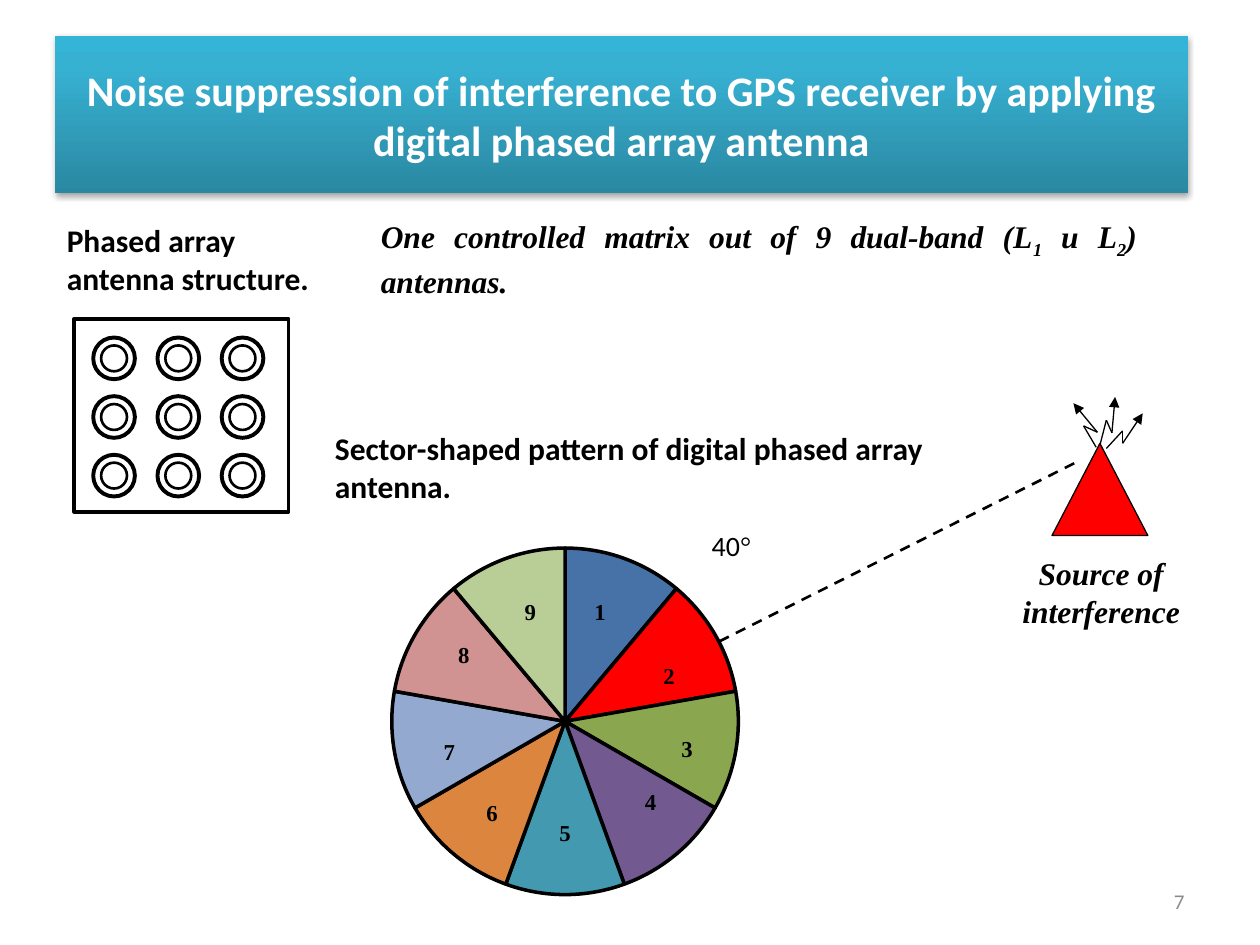
import copy
import itertools
from dataclasses import dataclass

import pptx
import pptx.chart.data
import pptx.dml.color
import pptx.enum.chart
import pptx.enum.dml
import pptx.enum.shapes
import pptx.enum.text
import pptx.oxml
import pptx.oxml.ns
import pptx.util

Pt = pptx.util.Pt
RGBColor = pptx.dml.color.RGBColor
Align = pptx.enum.text.PP_ALIGN
Anchor = pptx.enum.text.MSO_ANCHOR
Shape = pptx.enum.shapes.MSO_SHAPE

BLACK = RGBColor(0x00, 0x00, 0x00)
WHITE = RGBColor(0xFF, 0xFF, 0xFF)
RED = RGBColor(0xFF, 0x00, 0x00)
GREY = RGBColor(0x8C, 0x8C, 0x8C)
TITLE_STOPS = [
    (0, RGBColor(0x2A, 0x88, 0xA2)),
    (0.8, RGBColor(0x37, 0xB1, 0xD2)),
    (1, RGBColor(0x34, 0xB4, 0xD6)),
]
SANS = "Calibri"
SERIF = "Times New Roman"


@dataclass(frozen=True)
class Box:
    left: float
    top: float
    width: float
    height: float

    def lengths(self) -> list:
        return [Pt(v) for v in (self.left, self.top, self.width, self.height)]


@dataclass(frozen=True)
class Span:
    text: str
    baseline: int = 0
    font: str = ""


@dataclass(frozen=True)
class Style:
    font: str = SANS
    size: float = 18
    colour: RGBColor = BLACK
    bold: bool = True
    italic: bool = False
    align: Align = Align.LEFT
    anchor: Anchor = Anchor.TOP
    space_after: float = 0


@dataclass(frozen=True)
class Sector:
    colour: RGBColor
    label_shift_x: float
    label_shift_y: float


SECTORS = [
    Sector(RGBColor(0x46, 0x72, 0xA8), 3, -15),
    Sector(RED, 16.5, -0.5),
    Sector(RGBColor(0x8A, 0xA6, 0x4F), 21, 8),
    Sector(RGBColor(0x72, 0x59, 0x90), 17, 9),
    Sector(RGBColor(0x42, 0x99, 0xB0), 0, 15),
    Sector(RGBColor(0xDC, 0x85, 0x3E), -10, 15),
    Sector(RGBColor(0x93, 0xA9, 0xCF), -17.5, 9.5),
    Sector(RGBColor(0xD1, 0x93, 0x92), -15, -12.5),
    Sector(RGBColor(0xB9, 0xCD, 0x96), -3, -15),
]


def set_font(font, style: Style) -> None:
    font.name, font.size = style.font, Pt(style.size)
    font.bold, font.italic = style.bold, style.italic
    font.color.rgb = style.colour


def write(frame, spans: list[Span], style: Style):
    frame.word_wrap = True
    frame.vertical_anchor = style.anchor
    para = frame.paragraphs[0]
    para.alignment = style.align
    para.space_after = Pt(style.space_after)
    set_font(para.font, style)
    for part in spans:
        span = para.add_run()
        span.text = part.text
        if part.font:
            span.font.name = part.font
        if part.baseline:
            span.font._element.set("baseline", str(part.baseline))
    return para


def add_text(page, box: Box, text: str, style: Style) -> None:
    write(page.shapes.add_textbox(*box.lengths()).text_frame, [Span(text)], style)


def add_figure(page, kind: Shape, box: Box, fill: RGBColor, line: RGBColor, weight: float):
    figure = page.shapes.add_shape(kind, *box.lengths())
    figure.shadow.inherit = False
    figure.fill.solid()
    figure.fill.fore_color.rgb = fill
    figure.line.color.rgb = line
    figure.line.width = Pt(weight)
    return figure


def add_line(page, start: tuple, end: tuple, weight: float, arrow: bool = False):
    ends = [Pt(v) for v in (*start, *end)]
    line = page.shapes.add_connector(pptx.enum.shapes.MSO_CONNECTOR.STRAIGHT, *ends)
    line.line.color.rgb = BLACK
    line.line.width = Pt(weight)
    if arrow:
        head = pptx.oxml.parse_xml(f'<a:tailEnd {pptx.oxml.ns.nsdecls("a")} type="triangle"/>')
        line.line._get_or_add_ln().append(head)
    line._element.spPr.append(pptx.oxml.parse_xml(f'<a:effectLst {pptx.oxml.ns.nsdecls("a")}/>'))
    return line


def add_title(page, box: Box, text: str) -> None:
    title = page.shapes.add_shape(Shape.RECTANGLE, *box.lengths())
    title.line.fill.background()
    title.fill.gradient()
    title.fill.gradient_angle = 90
    first = title.fill.gradient_stops[0]._gs
    first.addnext(copy.deepcopy(first))
    for stop, (position, colour) in zip(title.fill.gradient_stops, TITLE_STOPS):
        stop.position = position
        stop.color.rgb = colour
    title._element.spPr.append(pptx.oxml.parse_xml(
        f'<a:effectLst {pptx.oxml.ns.nsdecls("a")}>'
        '<a:outerShdw blurRad="39370" dist="22860" dir="5400000" rotWithShape="0">'
        '<a:srgbClr val="000000"><a:alpha val="35000"/></a:srgbClr>'
        '</a:outerShdw></a:effectLst>'))
    style = Style(size=24, colour=WHITE, align=Align.CENTER, anchor=Anchor.MIDDLE)
    write(title.text_frame, [Span(text)], style)


def add_antenna_array(page) -> None:
    add_figure(page, Shape.RECTANGLE, Box(42.5, 182.2, 122.4, 110.2), WHITE, BLACK, 2.25)
    for row, column in itertools.product(range(3), repeat=2):
        centre_x, centre_y = 65.2 + 36.7 * column, 204.8 + 33.5 * row
        for size, weight in ((23.8, 2.25), (14.8, 1.5)):
            ring = Box(centre_x - size / 2, centre_y - size / 2, size, size)
            add_figure(page, Shape.OVAL, ring, WHITE, BLACK, weight)


def add_matrix_note(page) -> None:
    box = Box(212.6, 122.4, 442, 49.7)
    table = page.shapes.add_table(1, 1, *box.lengths()).table
    table.first_row = table.horz_banding = False
    cell = table.cell(0, 0)
    cell.fill.background()
    cell.margin_left = cell.margin_right = Pt(5)
    cell.margin_top = cell.margin_bottom = Pt(0)
    spans = [Span("One controlled matrix out of 9 dual-band (L"), Span("1", -25000),
             Span(" и L"), Span("2", -25000), Span(") antennas.")]
    para = write(cell.text_frame, spans, Style(SERIF, italic=True, align=Align.JUSTIFY))
    para.line_spacing = 1.15


def manual_layout(content: str):
    return pptx.oxml.parse_xml(f'<c:layout {pptx.oxml.ns.nsdecls("c")}><c:manualLayout>'
                               f'{content}</c:manualLayout></c:layout>')


def add_sector_pie(page, box: Box) -> None:
    numbers = [str(n + 1) for n in range(len(SECTORS))]
    sectors = pptx.chart.data.CategoryChartData()
    sectors.categories = numbers
    sectors.add_series("Series 1", [40] * len(SECTORS))
    pie = pptx.enum.chart.XL_CHART_TYPE.PIE
    chart = page.shapes.add_chart(pie, *box.lengths(), sectors).chart
    chart.has_legend = chart.has_title = False
    set_font(chart.font, Style(size=10, bold=False))
    plot = chart.plots[0]
    plot.vary_by_categories = True
    style = Style(SERIF, 13)
    centre = pptx.enum.chart.XL_LABEL_POSITION.CENTER
    labels = plot.series[0].data_labels
    labels.show_value, labels.position = True, centre
    set_font(labels.font, style)
    for index, (number, sector) in enumerate(zip(numbers, SECTORS)):
        point = plot.series[0].points[index]
        point.format.fill.solid()
        point.format.fill.fore_color.rgb = sector.colour
        point.format.line.color.rgb = BLACK
        point.format.line.width = Pt(2)
        span = point.data_label.text_frame.paragraphs[0].add_run()
        span.text = number
        set_font(span.font, style)
        point.data_label.position = centre
        point.data_label._get_or_add_dLbl().find(pptx.oxml.ns.qn("c:idx")).addnext(manual_layout(
            f'<c:x val="{sector.label_shift_x / box.width:.4f}"/>'
            f'<c:y val="{sector.label_shift_y / box.height:.4f}"/>'))
    for leader in labels._element.findall(pptx.oxml.ns.qn("c:showLeaderLines")):
        leader.set("val", "0")
    area = chart._chartSpace.chart.plotArea
    for old in area.findall(pptx.oxml.ns.qn("c:layout")):
        area.remove(old)
    area.insert(0, manual_layout(
        '<c:layoutTarget val="inner"/><c:xMode val="edge"/><c:yMode val="edge"/>'
        '<c:x val="0.127"/><c:y val="0.1"/><c:w val="0.744"/><c:h val="0.786"/>'))


def add_interference_source(page) -> None:
    beam = add_line(page, (411.1, 366.5), (614.9, 264.2), 1.5)
    beam.line.dash_style = pptx.enum.dml.MSO_LINE.DASH
    add_figure(page, Shape.ISOSCELES_TRIANGLE, Box(601.2, 253.4, 54.7, 52.6), RED, BLACK, 0.75)
    bolts = [
        [(632.2, 256.3), (641.5, 246.2), (641.5, 253.4), (653, 236.2)],
        [(628.6, 254.2), (632.2, 240.1), (635.4, 247.3), (637.2, 226.8)],
        [(626.4, 255.6), (619.2, 243.4), (627.1, 247), (613.4, 230.4)],
    ]
    for bolt in bolts:
        for start, end in itertools.pairwise(bolt):
            add_line(page, start, end, 0.75, arrow=end == bolt[-1])
    caption = add_figure(page, Shape.RECTANGLE, Box(575.3, 313.2, 108, 70.6), WHITE, WHITE, 0.75)
    style = Style(SERIF, italic=True, align=Align.CENTER, space_after=10)
    write(caption.text_frame, [Span("Source of interference")], style)


def main() -> None:
    deck = pptx.Presentation()
    deck.slide_width, deck.slide_height = Pt(720), Pt(540)
    page = deck.slides.add_slide(deck.slide_layouts[6])
    add_title(page, Box(31.2, 20.5, 647.7, 89.8), "Noise suppression of interference to GPS "
              "receiver by applying digital phased array antenna")
    add_antenna_array(page)
    add_matrix_note(page)
    add_text(page, Box(31.1, 122.7, 153.4, 51), "Phased array antenna structure.", Style())
    add_sector_pie(page, Box(190, 288, 266.4, 252))
    add_interference_source(page)
    add_text(page, Box(184.3, 241.6, 360, 51),
             "Sector-shaped pattern of digital phased array antenna.", Style())
    angle = add_figure(page, Shape.RECTANGLE, Box(399.6, 298.4, 51.1, 23.8), WHITE, WHITE, 0.75)
    write(angle.text_frame, [Span("40"), Span("°", font=SERIF)],
          Style(size=16, bold=False, space_after=10))
    add_text(page, Box(516.2, 500.4, 167.8, 28.8), "7", Style(
        size=12, colour=GREY, bold=False, align=Align.RIGHT, anchor=Anchor.MIDDLE))
    deck.save("out.pptx")


if __name__ == "__main__":
    main()
